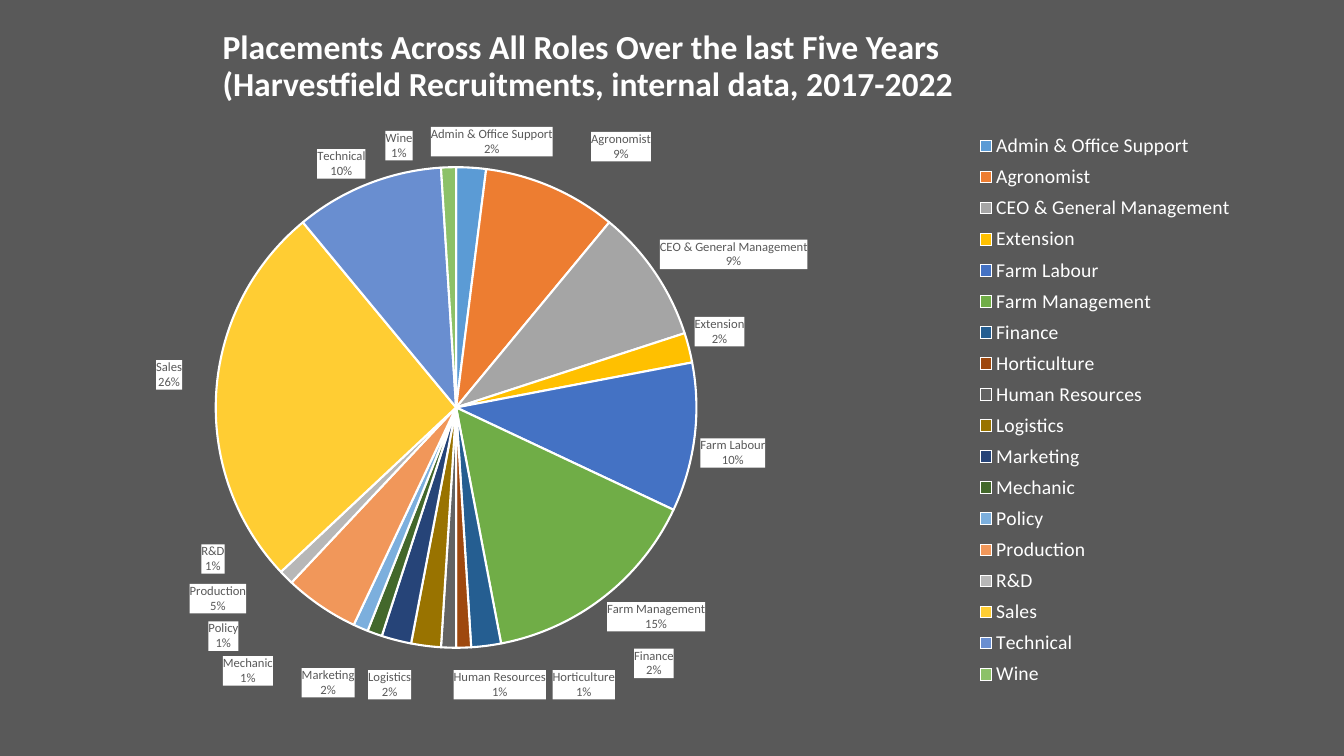
from copy import deepcopy

from pptx import Presentation
from pptx.chart.data import CategoryChartData
from pptx.dml.color import RGBColor
from pptx.enum.chart import XL_CHART_TYPE, XL_LABEL_POSITION, XL_LEGEND_POSITION
from pptx.enum.text import MSO_ANCHOR
from pptx.oxml import parse_xml
from pptx.oxml.ns import nsdecls, qn
from pptx.util import Inches, Pt

COLORS = {"background": "595959", "white": "FFFFFF", "label": "595959", "chart": "000000"}
FONT = "Calibri"
CHART_BOX = (0.59, 1.26, 11.92, 5.68)
PLOT_AREA = (0.13, 0.07, 0.4, 0.84)
LEGEND_AREA = (0.76, 0, 0.22, 0.99)

# Role, percentage, slice colour, label shift in inches (None keeps the default place)
ROLES = [
    ("Admin & Office Support", 2, "5B9BD5", (0.2, -0.09)),
    ("Agronomist", 9, "ED7D31", (0.37, -0.2)),
    ("CEO & General Management", 9, "A5A5A5", None),
    ("Extension", 2, "FFC000", None),
    ("Farm Labour", 10, "4472C4", None),
    ("Farm Management", 15, "70AD47", None),
    ("Finance", 2, "255E91", (1.46, -0.03)),
    ("Horticulture", 1, "9E480E", (1.19, 0.17)),
    ("Human Resources", 1, "636363", (0.51, 0.17)),
    ("Logistics", 2, "997300", (-0.14, 0.19)),
    ("Marketing", 2, "264478", (-0.4, 0.22)),
    ("Mechanic", 1, "43682B", (-0.99, 0.17)),
    ("Policy", 1, "7CAFDD", (-1.19, -0.12)),
    ("Production", 5, "F1975A", (-0.71, -0.27)),
    ("R&D", 1, "B7B7B7", (-0.57, -0.37)),
    ("Sales", 26, "FFCD33", (-0.28, -0.17)),
    ("Technical", 10, "698ED0", None),
    ("Wine", 1, "8CC168", (-0.49, -0.01)),
]


def rgb(color):
    return RGBColor.from_string(COLORS.get(color, color))


def set_font(font, size, color, bold=False):
    font.name, font.size, font.bold = FONT, Pt(size), bold
    font.color.rgb = rgb(color)


def add_text(p, text, **fmt):
    """Add text to a paragraph, turning each newline into a line break."""
    for i, line in enumerate(text.split("\n")):
        if i:
            p.add_line_break()
        r = p.add_run()
        r.text = line
        set_font(r.font, **fmt)


def layout_xml(settings):
    """Manual layout of a chart part, from pairs of element name and value."""
    values = "".join(f'<c:{name} val="{value}"/>' for name, value in settings)
    return parse_xml(
        f'<c:layout {nsdecls("c")}><c:manualLayout>{values}</c:manualLayout></c:layout>'
    )


def edge_settings(area):
    return [("xMode", "edge"), ("yMode", "edge"), *zip("xywh", area)]


def remove_children(root, tag):
    for old in root.findall(qn(tag)):
        root.remove(old)


class SlideBuilder:
    def __init__(self, prs):
        self.s = prs.slides.add_slide(prs.slide_layouts[6])
        fill = self.s.background.fill
        fill.solid()
        fill.fore_color.rgb = rgb("background")

    def title(self, box, text):
        sp = self.s.shapes.add_textbox(*map(Inches, box))
        tf = sp.text_frame
        tf.word_wrap = True
        tf.vertical_anchor = MSO_ANCHOR.MIDDLE
        p = tf.paragraphs[0]
        p.line_spacing = 0.9
        add_text(p, text, size=24, color="white", bold=True)

    def pie(self, box, roles):
        data = CategoryChartData()
        data.categories = [role[0] for role in roles]
        data.add_series("Series 1", [role[1] for role in roles])
        chart = self.s.shapes.add_chart(
            XL_CHART_TYPE.PIE, *map(Inches, box), data
        ).chart
        chart.has_title = False
        set_font(chart.font, 10, "chart")
        chart.plots[0].vary_by_categories = True

        plot_area = chart._chartSpace.chart.plotArea
        remove_children(plot_area, "c:layout")
        plot_area.insert(0, layout_xml([("layoutTarget", "inner"), *edge_settings(PLOT_AREA)]))

        series = chart.plots[0].series[0]
        for i, role in enumerate(roles):
            fmt = series.points[i].format
            fmt.fill.solid()
            fmt.fill.fore_color.rgb = rgb(role[2])
            fmt.line.color.rgb = rgb("white")
            fmt.line.width = Pt(1.5)
        self.pie_labels(series, box, roles)
        self.legend(chart)

    def pie_labels(self, series, box, roles):
        labels = series.data_labels
        labels.show_category_name = labels.show_percentage = True
        labels.show_value = False
        labels.position = XL_LABEL_POSITION.OUTSIDE_END
        set_font(labels.font, 9, "label")

        root = labels._element
        root.find(qn("c:txPr")).addprevious(parse_xml(
            f'<c:spPr {nsdecls("c", "a")}><a:solidFill>'
            f'<a:srgbClr val="{COLORS["white"]}"/></a:solidFill></c:spPr>'
        ))
        remove_children(root, "c:showLeaderLines")
        root.append(parse_xml(f'<c:separator {nsdecls("c")}>\n</c:separator>'))
        shared = [deepcopy(el) for el in root]
        root.append(parse_xml(f'<c:showLeaderLines {nsdecls("c")} val="0"/>'))

        moved = [(i, role[3]) for i, role in enumerate(roles) if role[3]]
        for place, (i, (dx, dy)) in enumerate(moved):
            label = parse_xml(f'<c:dLbl {nsdecls("c")}><c:idx val="{i}"/></c:dLbl>')
            label.append(layout_xml([("x", dx / box[2]), ("y", dy / box[3])]))
            label.extend(deepcopy(shared))
            root.insert(place, label)

    def legend(self, chart):
        chart.has_legend = True
        legend = chart.legend
        legend.position = XL_LEGEND_POSITION.RIGHT
        legend.include_in_layout = False
        set_font(legend.font, 14, "white")
        root = legend._element
        remove_children(root, "c:layout")
        root.find(qn("c:legendPos")).addnext(layout_xml(edge_settings(LEGEND_AREA)))


def main():
    prs = Presentation()
    prs.slide_width, prs.slide_height = Inches(13.33), Inches(7.5)
    slide = SlideBuilder(prs)
    slide.title(
        (2.11, 0.36, 10.26, 0.61),
        "Placements Across All Roles Over the last Five Years\n"
        "(Harvestfield Recruitments, internal data, 2017-2022",
    )
    slide.pie(CHART_BOX, ROLES)
    prs.save("out.pptx")


if __name__ == "__main__":
    main()
